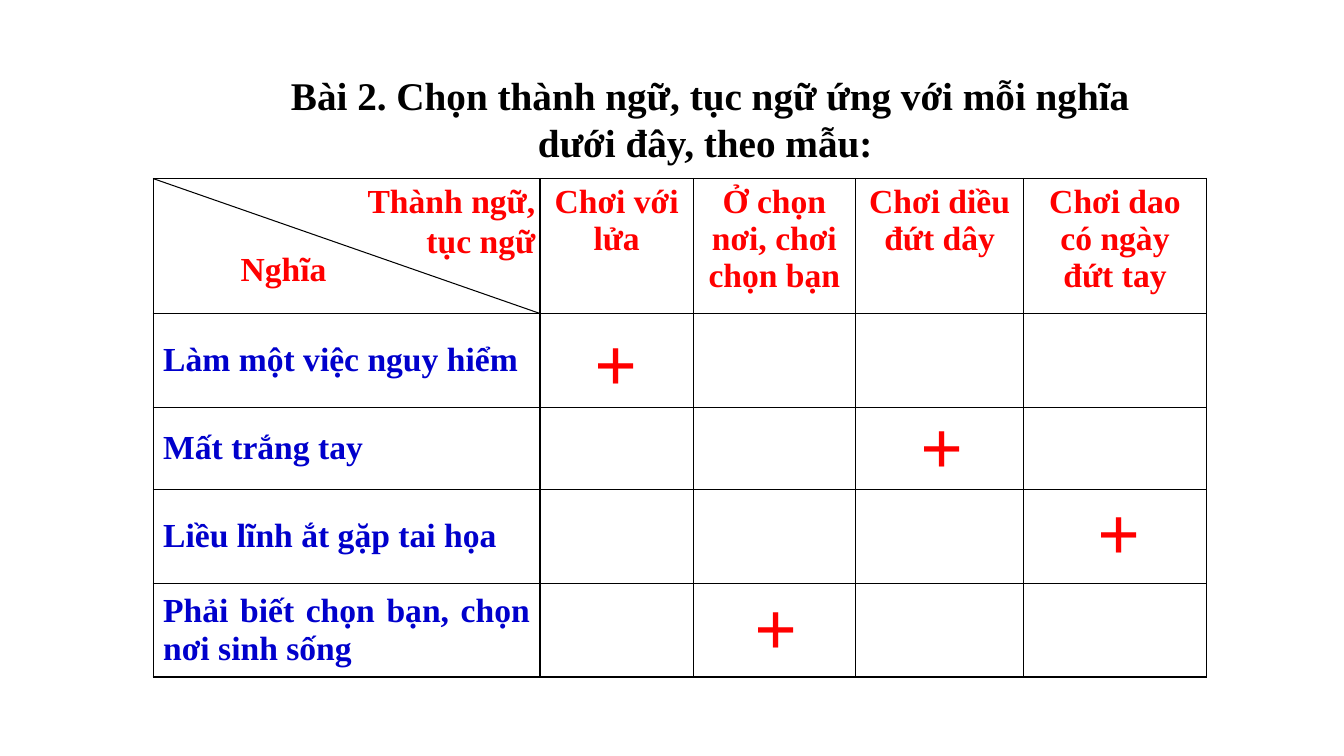
"""Build a slide matching Vietnamese idioms to their meanings in a table."""
import pptx
import pptx.util
import pptx.oxml
import pptx.dml.color
import pptx.enum.text
import pptx.enum.shapes
from lxml import etree

Cm, Pt = pptx.util.Cm, pptx.util.Pt
RGBColor = pptx.dml.color.RGBColor
ALIGN = pptx.enum.text.PP_ALIGN
ANCHOR = pptx.enum.text.MSO_ANCHOR

BLACK = RGBColor(0x00, 0x00, 0x00)
RED = RGBColor(0xFF, 0x00, 0x00)
BLUE = RGBColor(0x00, 0x00, 0xCC)
FONT = "Times New Roman"

TITLE = "Bài 2. Chọn thành ngữ, tục ngữ ứng với mỗi nghĩa dưới đây, theo mẫu: "
IDIOMS = ["Chơi với lửa", "Ở chọn nơi, chơi chọn bạn", "Chơi diều đứt dây",
          "Chơi dao có ngày đứt tay"]
MEANINGS = ["Làm một việc nguy hiểm", "Mất trắng tay", "Liều lĩnh ắt gặp tai họa",
            "Phải biết chọn bạn, chọn nơi sinh sống"]
COLS = [9.75, 3.86, 4.09, 4.24, 4.6]
ROWS = [3.4, 2.36, 2.08, 2.36, 2.36]
LEFT, TOP = 3.86, 4.5
CORNER_LABELS = [
    ("Nghĩa", (5.66, 6.22, 2.97, 1.07), ALIGN.CENTER),
    ("Thành ngữ, tục ngữ", (8.86, 4.7, 4.88, 1.7), ALIGN.RIGHT),
]
MARKS = [(14.58, 8.26), (22.78, 10.34), (27.25, 12.52), (18.62, 14.91)]
MARK_SIZE = (1.9, 1.7)


def write(tf, text, size, color, align):
    p = tf.paragraphs[0]
    p.alignment = align
    r = p.add_run()
    r.text = text
    r.font.name = FONT
    r.font.size = Pt(size)
    r.font.bold = True
    r.font.color.rgb = color


def add_label(s, text, box, size, align):
    tf = s.shapes.add_textbox(*map(Cm, box)).text_frame
    tf.word_wrap = True
    tf.vertical_anchor = ANCHOR.MIDDLE
    write(tf, text, size, RED, align)


def add_borders(cell):
    tc_pr = cell._tc.get_or_add_tcPr()
    for i, side in enumerate(("lnL", "lnR", "lnT", "lnB")):
        ln = pptx.oxml.parse_xml(
            f'<a:{side} xmlns:a="http://schemas.openxmlformats.org/drawingml/2006/main" '
            f'w="{Pt(1)}"><a:solidFill><a:srgbClr val="{BLACK}"/></a:solidFill></a:{side}>')
        tc_pr.insert(i, ln)


def add_title(s):
    title = s.shapes.title
    title.left, title.top, title.width, title.height = map(Cm, (6.63, 1.68, 22.53, 2.64))
    tf = title.text_frame
    tf.word_wrap = True
    tf.auto_size = pptx.enum.text.MSO_AUTO_SIZE.NONE
    tf.vertical_anchor = ANCHOR.TOP
    write(tf, TITLE, 28, BLACK, ALIGN.CENTER)


def add_idiom_table(s):
    frame = s.shapes.add_table(len(ROWS), len(COLS), Cm(LEFT), Cm(TOP),
                               Cm(sum(COLS)), Cm(sum(ROWS)))
    table = frame.table
    table.first_row = table.horz_banding = False
    for column, width in zip(table.columns, COLS):
        column.width = Cm(width)
    for row, height in zip(table.rows, ROWS):
        row.height = Cm(height)
    for cell in table.iter_cells():
        cell.fill.background()
        add_borders(cell)
    for c, idiom in enumerate(IDIOMS, 1):
        write(table.cell(0, c).text_frame, idiom, 24, RED, ALIGN.CENTER)
    for r, meaning in enumerate(MEANINGS, 1):
        cell = table.cell(r, 0)
        cell.vertical_anchor = ANCHOR.MIDDLE
        write(cell.text_frame, meaning, 24, BLUE, ALIGN.JUSTIFY)


def add_diagonal(s):
    line = s.shapes.add_connector(
        pptx.enum.shapes.MSO_CONNECTOR.STRAIGHT, Cm(LEFT), Cm(TOP),
        Cm(LEFT + COLS[0]), Cm(TOP + ROWS[0]))
    line.line.color.rgb = BLACK
    line.line.width = Pt(0.75)
    etree.SubElement(line._element.spPr, pptx.oxml.ns.qn("a:effectLst"))


def main():
    prs = pptx.Presentation()
    prs.slide_width, prs.slide_height = Cm(33.87), Cm(19.05)
    s = prs.slides.add_slide(prs.slide_layouts[5])
    add_title(s)
    add_idiom_table(s)
    add_diagonal(s)
    for text, box, align in CORNER_LABELS:
        add_label(s, text, box, 24, align)
    for mark in MARKS:
        add_label(s, "+", mark + MARK_SIZE, 54, ALIGN.CENTER)
    prs.save("out.pptx")


if __name__ == "__main__":
    main()
